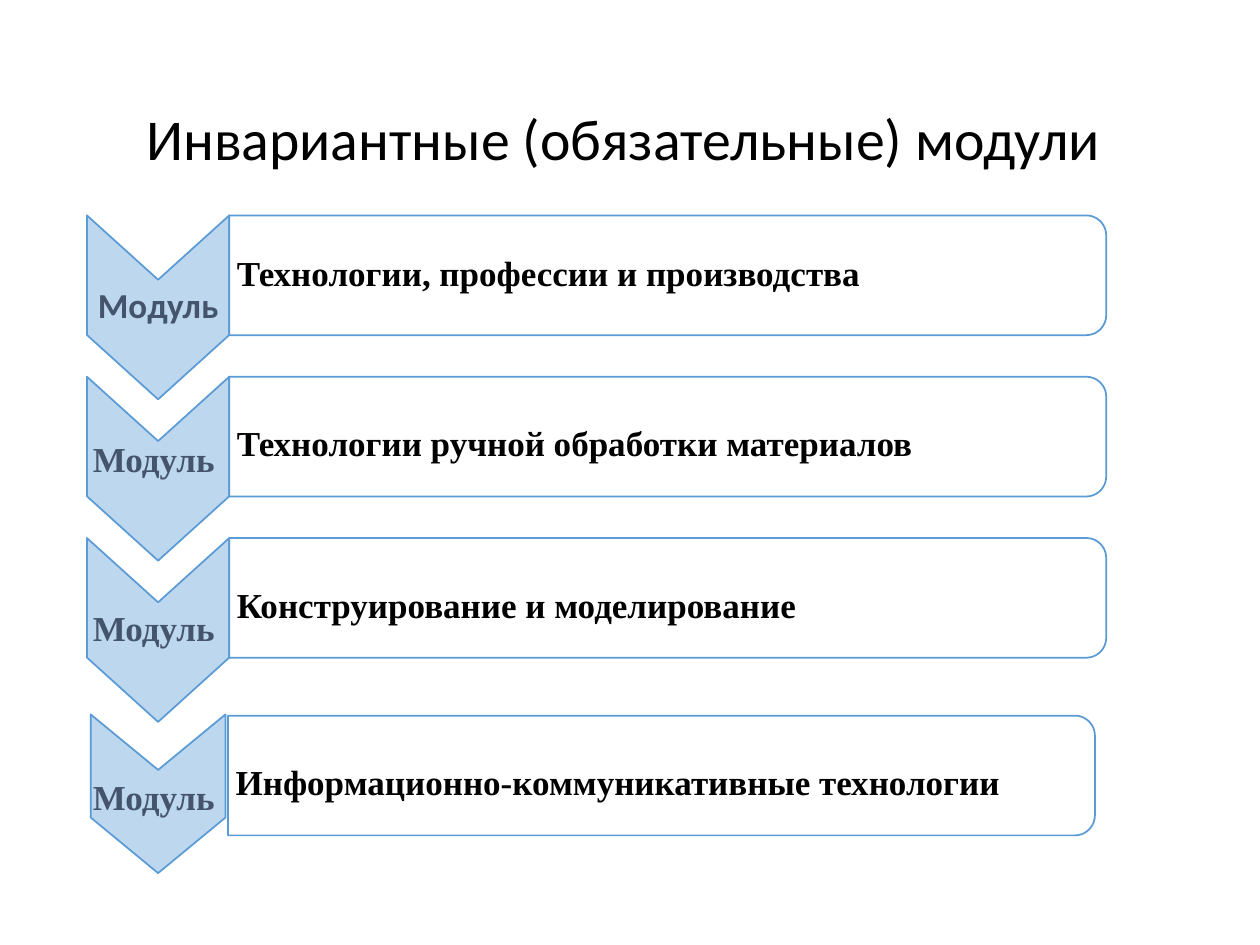
from dataclasses import dataclass
from math import cos, pi, sin

from lxml import etree
from pptx import Presentation
from pptx.dml.color import RGBColor
from pptx.enum.text import MSO_ANCHOR, PP_ALIGN
from pptx.oxml.ns import qn
from pptx.util import Inches, Pt

LEFT, CENTER = PP_ALIGN.LEFT, PP_ALIGN.CENTER
TOP, MIDDLE = MSO_ANCHOR.TOP, MSO_ANCHOR.MIDDLE


@dataclass(frozen=True)
class Theme:
    chevron: str = "BDD7EE"
    panel: str = "FFFFFF"
    line: str = "5B9BD5"
    label: str = "44546A"
    text: str = "000000"
    sans: str = "Calibri"
    serif: str = "Times New Roman"
    title_size: int = 33
    body_size: int = 20
    line_width: int = 1


THEME = Theme()
SLIDE_W, SLIDE_H = 10, 7.5
ROW_PITCH = 1.28
LABEL_PITCH = 1.34
FIRST_ROW = 1.71
PANEL_H = 0.95
INSET = 0.06
DROP = 0.2  # top inset that lowers the text of the later panels
LABEL = "Модуль"
MODULES = [
    "Технологии, профессии и производства",
    "Технологии ручной обработки материалов",
    "Конструирование и моделирование",
    "Информационно-коммуникативные технологии",
]


def write(s, text, font, size, color, bold=True, align=CENTER,
          anchor=MIDDLE, insets=(0.1, 0.05, 0.1, 0.05), wrap=True):
    """Put one paragraph in s; insets are left, top, right, bottom in inches."""
    tf = s.text_frame
    tf.word_wrap = wrap
    tf.vertical_anchor = anchor
    for side, inset in zip(("left", "top", "right", "bottom"), insets):
        setattr(tf, f"margin_{side}", Inches(inset))
    p = tf.paragraphs[0]
    p.alignment, p.line_spacing = align, 0.9
    r = p.add_run()
    r.text = text
    formats = {"name": font, "size": Pt(size), "bold": bold}
    for name, value in formats.items():
        setattr(r.font, name, value)
    r.font.color.rgb = RGBColor.from_string(color)


def add_text(slide, box, *args, **formats):
    s = slide.shapes.add_textbox(*map(Inches, box))
    write(s, *args, **formats)


def add_outline(slide, points, fill, alpha=None):
    """Draw a closed polygon through points in inches; alpha is in percent."""
    start, *rest = [(Inches(x), Inches(y)) for x, y in points]
    builder = slide.shapes.build_freeform(*start)
    builder.add_line_segments(rest, close=True)
    s = builder.convert_to_shape()
    s.shadow.inherit = False
    s.fill.solid()
    s.fill.fore_color.rgb = RGBColor.from_string(fill)
    s.line.color.rgb = RGBColor.from_string(THEME.line)
    s.line.width = Pt(THEME.line_width)
    if alpha is not None:
        color = s._element.spPr.find(qn("a:solidFill"))[0]
        etree.SubElement(color, qn("a:alpha"), val=str(alpha * 1000))
    return s


def add_chevron(slide, box):
    x, y, w, h = box
    notch = 0.35 * h
    right, middle, bottom = x + w, x + w / 2, y + h
    return add_outline(slide, [
        (right, y), (right, bottom - notch), (middle, bottom),
        (x, bottom - notch), (x, y), (middle, y + notch),
    ], THEME.chevron)


def add_panel(slide, box, text, top_inset):
    """Draw a panel with rounded right corners and its module name."""
    x, y, w, h = box
    radius, steps = h / 6, 12
    corners = []
    for cy, start in ((y + radius, -pi / 2), (y + h - radius, 0)):
        for i in range(steps + 1):
            angle = start + i * pi / 2 / steps
            corners.append((x + w - radius + radius * cos(angle),
                            cy + radius * sin(angle)))
    s = add_outline(slide, [(x, y), *corners, (x, y + h)], THEME.panel, 90)
    write(s, text, THEME.serif, THEME.body_size, THEME.text, align=LEFT,
          insets=(INSET, top_inset, INSET, INSET))


def add_module(slide, chevron_box, panel_box, text, label_box=None):
    """Place one row; without label_box the label sits in the chevron."""
    chevron = add_chevron(slide, chevron_box)
    add_panel(slide, panel_box, text, DROP if label_box else INSET)
    if label_box:
        add_text(slide, label_box, LABEL, THEME.serif, THEME.body_size,
                 THEME.label, anchor=TOP, wrap=False)
    else:
        write(chevron, LABEL, THEME.sans, THEME.body_size, THEME.label,
              insets=(0.02,) * 4)


def add_modules(slide):
    for i, text in enumerate(MODULES):
        y = FIRST_ROW + i * ROW_PITCH
        chevron_box = (0.69, y, 1.13, 1.46)
        panel_box = (1.82, y, 6.96, PANEL_H)
        if i == len(MODULES) - 1:
            chevron_box = (0.72, 5.67, 1.07, 1.26)
            panel_box = (1.81, 5.68, 6.88, PANEL_H)
        label_box = (0.63, 3.46 + (i - 1) * LABEL_PITCH, 1.18, 0.4)
        add_module(slide, chevron_box, panel_box, text,
                   label_box if i else None)


def main():
    prs = Presentation()
    prs.slide_width, prs.slide_height = Inches(SLIDE_W), Inches(SLIDE_H)
    slide = prs.slides.add_slide(prs.slide_layouts[6])
    add_text(slide, (0.69, 0.4, 8.62, 1.45),
             "Инвариантные (обязательные) модули ", THEME.sans,
             THEME.title_size, THEME.text, bold=False)
    add_modules(slide)
    prs.save("out.pptx")


if __name__ == "__main__":
    main()
